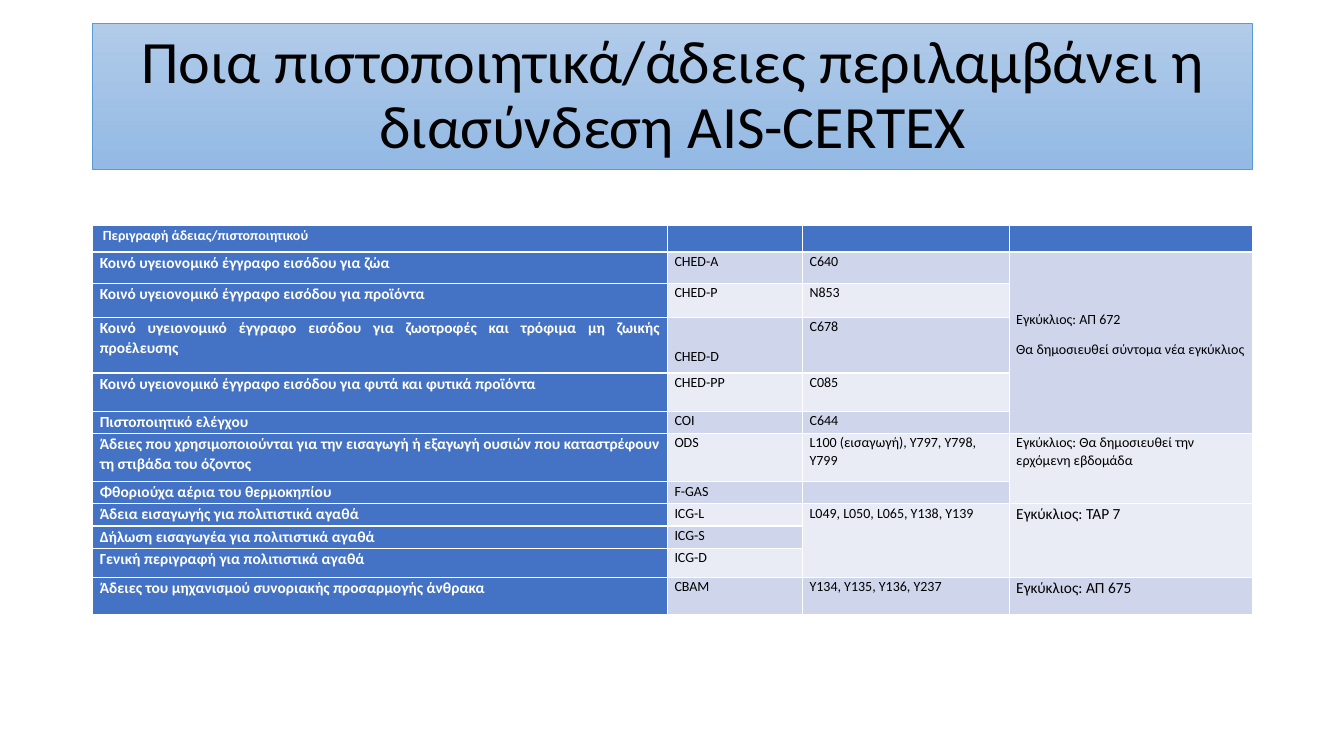
import pptx
import pptx.dml.color
import pptx.enum.text
import pptx.util

Inches, Pt = pptx.util.Inches, pptx.util.Pt
RGB = pptx.dml.color.RGBColor.from_string
PP_ALIGN = pptx.enum.text.PP_ALIGN
MSO_ANCHOR = pptx.enum.text.MSO_ANCHOR

THEME = {
    "font": "Calibri",
    "black": RGB("000000"),
    "white": RGB("FFFFFF"),
    "header": RGB("4472C4"),
    "bands": [RGB("E9EBF5"), RGB("CFD5EA")],
    "title_gradient": [RGB("B1CBE9"), RGB("93B9E4")],
    "title_line": RGB("5B9BD5"),
    "title_size": Pt(42.9),
    "label_size": Pt(11),
    "body_size": Pt(10),
}

COL_WIDTHS = [5.7, 1.34, 2.05, 2.41]
ROW_HEIGHTS = [0.26, 0.31, 0.34, 0.55, 0.38, 0.22, 0.48, 0.22, 0.22, 0.22, 0.29, 0.37]
ROWS = [
    ["Περιγραφή άδειας/πιστοποιητικού", "", "", ""],
    ["Κοινό υγειονομικό έγγραφο εισόδου για ζώα", "CHED-A", "C640",
     "Εγκύκλιος: ΑΠ 672\nΘα δημοσιευθεί σύντομα νέα εγκύκλιος"],
    ["Κοινό υγειονομικό έγγραφο εισόδου για προϊόντα", "CHED-P", "N853", ""],
    ["Κοινό υγειονομικό έγγραφο εισόδου για ζωοτροφές και τρόφιμα μη ζωικής προέλευσης",
     "CHED-D", "C678", ""],
    ["Κοινό υγειονομικό έγγραφο εισόδου για φυτά και φυτικά προϊόντα", "CHED-PP", "C085", ""],
    ["Πιστοποιητικό ελέγχου", "COI", "C644", ""],
    ["Άδειες που χρησιμοποιούνται για την εισαγωγή ή εξαγωγή ουσιών που "
     "καταστρέφουν τη στιβάδα του όζοντος",
     "ODS", "L100 (εισαγωγή), Y797, Y798, Y799",
     "Εγκύκλιος: Θα δημοσιευθεί την ερχόμενη εβδομάδα"],
    ["Φθοριούχα αέρια του θερμοκηπίου", "F-GAS", "", ""],
    ["Άδεια εισαγωγής για πολιτιστικά αγαθά", "ICG-L", "L049, L050, L065, Y138, Y139",
     "Εγκύκλιος: TAP 7"],
    ["Δήλωση εισαγωγέα για πολιτιστικά αγαθά", "ICG-S", "", ""],
    ["Γενική περιγραφή για πολιτιστικά αγαθά", "ICG-D", "", ""],
    ["Άδειες του μηχανισμού συνοριακής προσαρμογής άνθρακα", "CBAM",
     "Υ134, Υ135, Υ136, Υ237", "Εγκύκλιος: ΑΠ 675"],
]
MERGES = [(1, 5, 3), (6, 7, 3), (8, 10, 2), (8, 10, 3)]
TOP_MARGINS = {(1, 3): 0.58, (3, 1): 0.29}
LARGE_NOTES = [(8, 3), (11, 3)]

prs = pptx.Presentation()
prs.slide_width, prs.slide_height = Inches(13.33), Inches(7.5)
s = prs.slides.add_slide(prs.slide_layouts[5])

title = s.shapes.title
title.left, title.top = Inches(0.92), Inches(0.23)
title.width, title.height = Inches(11.5), Inches(1.45)
title.fill.gradient()
title.fill.gradient_angle = 270
for stop, color in zip(title.fill.gradient_stops, THEME["title_gradient"]):
    stop.color.rgb = color
for stop, position in zip(title.fill.gradient_stops, [0, 1]):
    stop.position = position
title.line.color.rgb = THEME["title_line"]
title.line.width = Pt(0.5)
tf = title.text_frame
tf.text = "Ποια πιστοποιητικά/άδειες περιλαμβάνει η διασύνδεση AIS-CERTEX"
tf.word_wrap = True
tf.auto_size = pptx.enum.text.MSO_AUTO_SIZE.NONE
tf.vertical_anchor = MSO_ANCHOR.MIDDLE
p = tf.paragraphs[0]
p.alignment = PP_ALIGN.CENTER
p.line_spacing = 0.9
p.font.name = THEME["font"]
p.font.size = THEME["title_size"]
p.font.color.rgb = THEME["black"]

table = s.shapes.add_table(
    len(ROWS), len(COL_WIDTHS), Inches(0.92), Inches(2.24),
    Inches(sum(COL_WIDTHS)), Inches(sum(ROW_HEIGHTS))).table
for column, width in zip(table.columns, COL_WIDTHS):
    column.width = Inches(width)
for row, height in zip(table.rows, ROW_HEIGHTS):
    row.height = Inches(height)

for i, texts in enumerate(ROWS):
    for j, text in enumerate(texts):
        cell = table.cell(i, j)
        is_label = i == 0 or j == 0
        is_large = (i > 0 and j == 0) or (i, j) in LARGE_NOTES
        cell.fill.solid()
        cell.fill.fore_color.rgb = THEME["header"] if is_label else THEME["bands"][i % 2]
        cell.margin_left = Inches(0.1 if (i, j) == (0, 0) else 0.07)
        cell.margin_right = Inches(0.07)
        cell.margin_top = Inches(TOP_MARGINS.get((i, j), 0))
        cell.margin_bottom = 0
        cell.text = text
        for p in cell.text_frame.paragraphs:
            p.alignment = PP_ALIGN.JUSTIFY if j == 0 else PP_ALIGN.LEFT
            p.line_spacing = 1.07
            p.space_after = Pt(8)
            p.font.name = THEME["font"]
            p.font.size = THEME["label_size"] if is_large else THEME["body_size"]
            p.font.bold = is_label
            p.font.color.rgb = THEME["white"] if is_label else THEME["black"]

for first, last, j in MERGES:
    table.cell(first, j).merge(table.cell(last, j))

prs.save("out.pptx")
